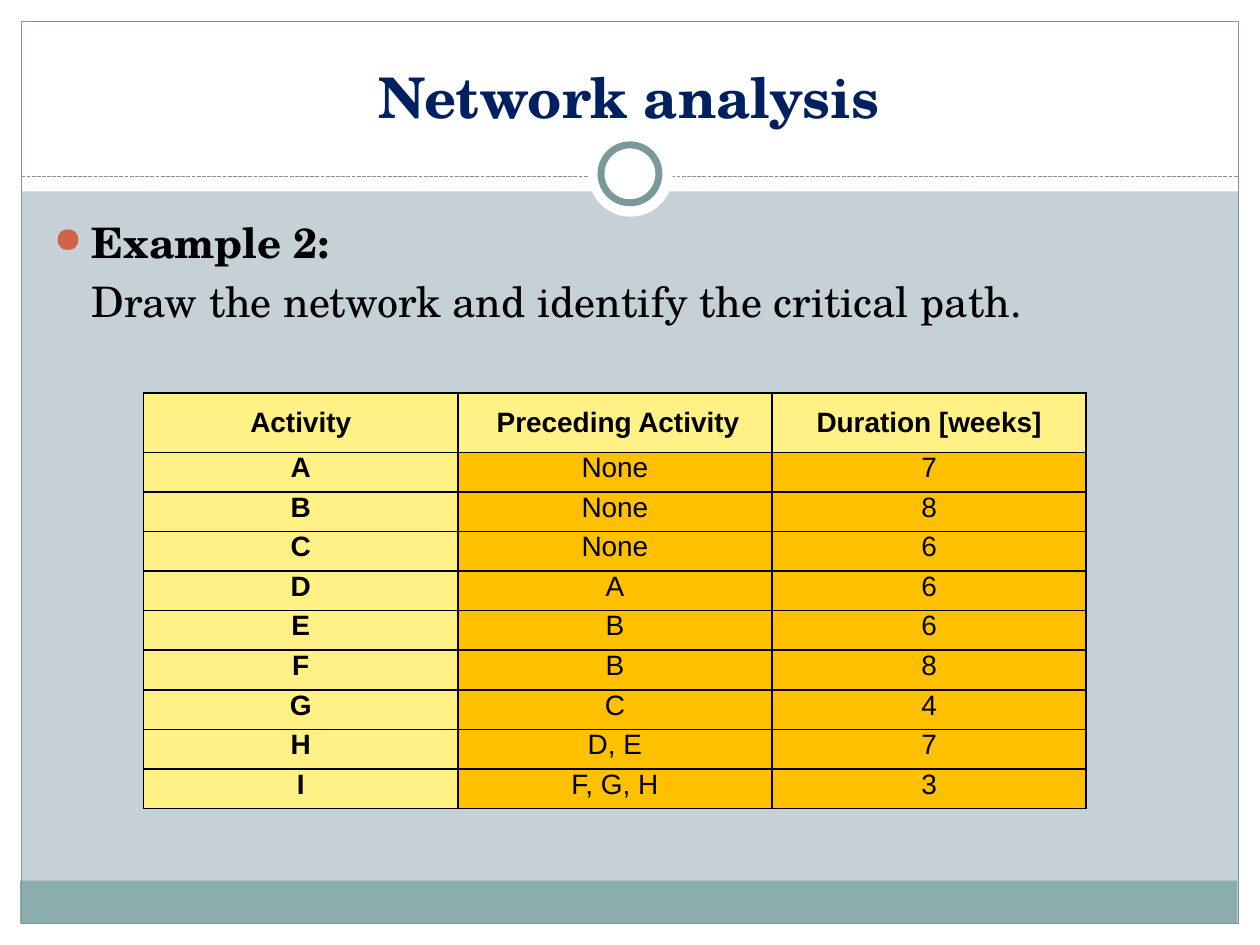
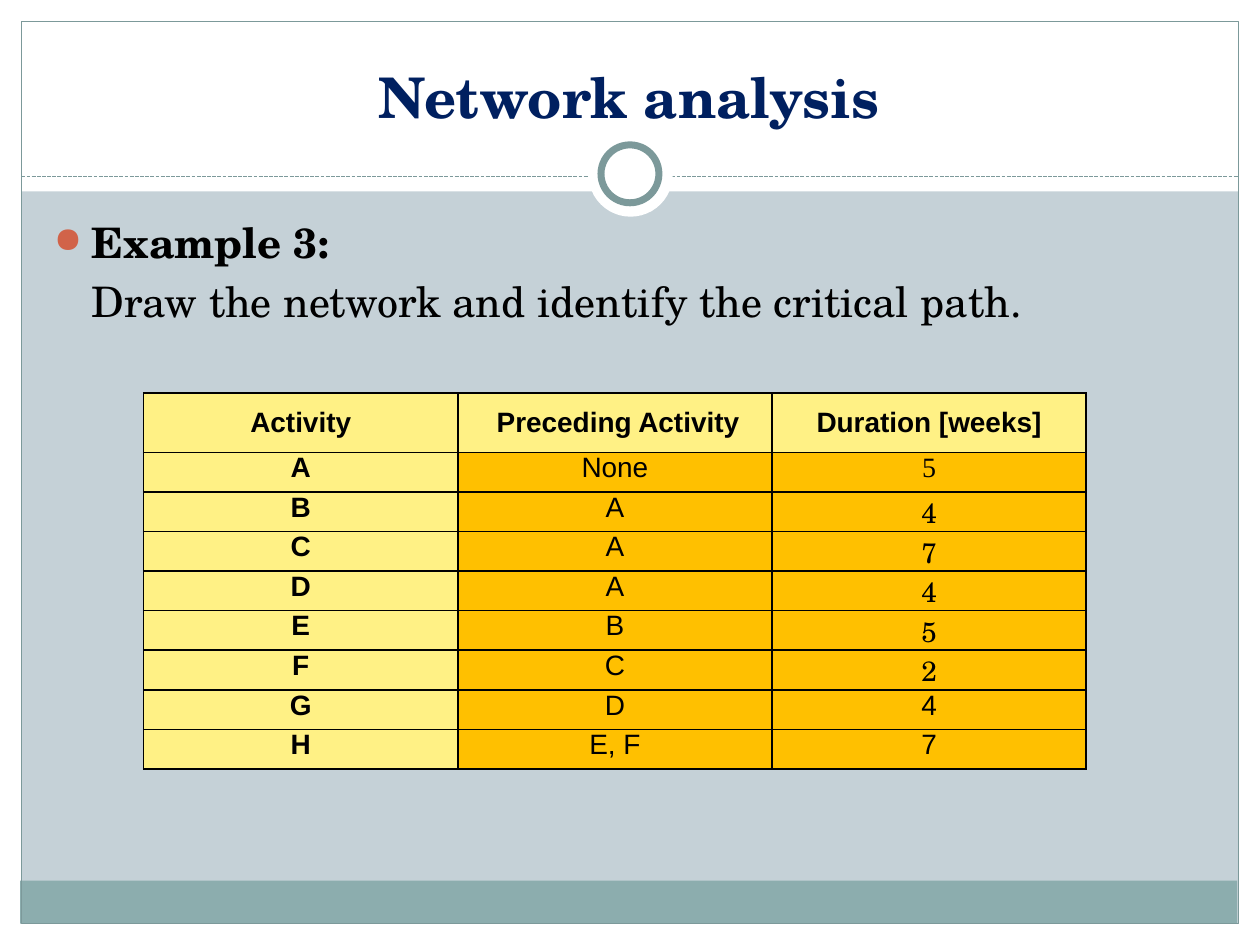
from dataclasses import dataclass

from lxml.etree import SubElement
from pptx import Presentation
from pptx.dml.color import RGBColor
from pptx.enum.dml import MSO_LINE
from pptx.enum.shapes import MSO_CONNECTOR, MSO_SHAPE
from pptx.enum.text import MSO_ANCHOR, PP_ALIGN
from pptx.oxml.ns import qn
from pptx.util import Inches, Pt


@dataclass(frozen=True)
class Theme:
    background: str = "C5D1D7"
    white: str = "FFFFFF"
    footer: str = "8CADAE"
    frame: str = "7C999A"
    title: str = "002060"
    ink: str = "000000"
    bullet: str = "D16349"
    header_cell: str = "FFF185"
    value_cell: str = "FFC000"
    serif: str = "TeX Gyre Schola"
    sans: str = "Arial"
    digits: str = "Times New Roman"
    title_size: int = 32
    body_size: int = 24
    table_size: int = 16


class Deck:
    def __init__(self, theme):
        self.theme = theme
        self.presentation = Presentation()
        self.presentation.slide_width = Inches(10)
        self.presentation.slide_height = Inches(7.5)
        self.slide = None

    def add_slide(self):
        self.slide = self.presentation.slides.add_slide(self.presentation.slide_layouts[6])
        self.paint(self.slide.background.fill, self.theme.background)
        self.add_frame()

    def paint(self, fill, color):
        fill.solid()
        fill.fore_color.rgb = RGBColor.from_string(color)

    def add_shape(self, kind, box, fill=None, line=None, width=0.75):
        shape = self.slide.shapes.add_shape(kind, *map(Inches, box))
        shape.shadow.inherit = False
        if fill:
            self.paint(shape.fill, fill)
        else:
            shape.fill.background()
        if line:
            self.paint(shape.line.fill, line)
            shape.line.width = Pt(width)
        else:
            shape.line.fill.background()

    def add_dashed_line(self, left, right, top):
        connector = self.slide.shapes.add_connector(
            MSO_CONNECTOR.STRAIGHT, Inches(left), Inches(top), Inches(right), Inches(top))
        self.paint(connector.line.fill, self.theme.frame)
        connector.line.width = Pt(0.75)
        connector.line.dash_style = MSO_LINE.SQUARE_DOT
        SubElement(connector.element.spPr, qn("a:effectLst"))

    def add_frame(self):
        theme = self.theme
        margins = [(0, 7.33, 10, 0.17), (0, 0, 10, 1.52), (0, 0, 0.17, 7.5), (9.83, 0, 0.17, 7.5)]
        for margin in margins:
            self.add_shape(MSO_SHAPE.RECTANGLE, margin, theme.white)
        self.add_shape(MSO_SHAPE.RECTANGLE, (0.16, 6.99, 9.66, 0.34), theme.footer)
        self.add_shape(MSO_SHAPE.RECTANGLE, (0.17, 0.17, 9.66, 7.16), line=theme.frame)
        self.add_dashed_line(0.17, 9.83, 1.4)
        self.add_shape(MSO_SHAPE.OVAL, (4.67, 1.05, 0.67, 0.67), theme.white)
        self.add_shape(MSO_SHAPE.OVAL, (4.77, 1.15, 0.46, 0.46), theme.white, theme.frame, 4)

    def add_text_frame(self, box, anchor=MSO_ANCHOR.TOP):
        text_frame = self.slide.shapes.add_textbox(*map(Inches, box)).text_frame
        text_frame.word_wrap = True
        text_frame.vertical_anchor = anchor
        return text_frame

    def add_run(self, paragraph, text, size, font, color, bold=False):
        run = paragraph.add_run()
        run.text = text
        run.font.size = Pt(size)
        run.font.name = font
        run.font.bold = bold
        run.font.color.rgb = RGBColor.from_string(color)

    def indent(self, paragraph, left, first=0):
        properties = paragraph._p.get_or_add_pPr()
        properties.set("marL", str(Inches(left)))
        properties.set("indent", str(Inches(first)))
        return properties

    def add_title(self, text):
        theme = self.theme
        paragraph = self.add_text_frame((0.33, 0.25, 9.33, 0.83), MSO_ANCHOR.BOTTOM).paragraphs[0]
        paragraph.alignment = PP_ALIGN.CENTER
        self.add_run(paragraph, text, theme.title_size, theme.serif, theme.title, True)

    def add_task(self, heading, instruction):
        theme = self.theme
        text_frame = self.add_text_frame((0.33, 1.67, 9.36, 5))
        first, second = text_frame.paragraphs[0], text_frame.add_paragraph()
        for paragraph, text, bold in ((first, heading, True), (second, instruction, False)):
            paragraph.space_before = Pt(theme.body_size * 0.2)
            self.add_run(paragraph, text, theme.body_size, theme.serif, theme.ink, bold)
        self.indent(second, 0.3)
        properties = self.indent(first, 0.3, -0.3)
        bullet_color = SubElement(properties, qn("a:buClr"))
        SubElement(bullet_color, qn("a:srgbClr"), val=theme.bullet)
        SubElement(properties, qn("a:buSzPct"), val="85000")
        SubElement(properties, qn("a:buChar"), char="●")

    def add_cell_borders(self, cell):
        properties = cell._tc.get_or_add_tcPr()
        for side in ("L", "R", "T", "B"):
            border = SubElement(properties, qn(f"a:ln{side}"), w=str(Pt(1)))
            fill = SubElement(border, qn("a:solidFill"))
            SubElement(fill, qn("a:srgbClr"), val=self.theme.ink)

    def add_cell(self, cell, text, font, is_label, is_header):
        theme = self.theme
        cell.margin_left = cell.margin_right = Inches(0.05)
        cell.margin_top = cell.margin_bottom = 0
        cell.vertical_anchor = MSO_ANCHOR.MIDDLE if is_header else MSO_ANCHOR.TOP
        self.add_cell_borders(cell)
        self.paint(cell.fill, theme.header_cell if is_label else theme.value_cell)
        paragraph = cell.text_frame.paragraphs[0]
        paragraph.alignment = PP_ALIGN.CENTER
        self.add_run(paragraph, text, theme.table_size, font, theme.ink, is_label)
        return paragraph

    def add_activity_table(self, activities, duration_fonts):
        header = ("Activity", "Preceding Activity", "Duration [weeks]")
        rows = [header, *activities]
        header_height, row_height = Inches(0.47), Inches(2.83) // 9
        table = self.slide.shapes.add_table(
            len(rows), len(header), Inches(1.14), Inches(3.12), Inches(7.48),
            header_height + row_height * len(activities)).table
        table.first_row = table.horz_banding = False
        for row_index, row in enumerate(rows):
            is_header = row_index == 0
            table.rows[row_index].height = header_height if is_header else row_height
            for column, text in enumerate(row):
                is_duration = column == 2 and not is_header
                font = duration_fonts.get(row[0], self.theme.sans) if is_duration else self.theme.sans
                paragraph = self.add_cell(
                    table.cell(row_index, column), text, font, is_header or column == 0, is_header)
                if is_header and column == 1:
                    self.indent(paragraph, 0, 0.05)


def main():
    theme = Theme()
    deck = Deck(theme)
    examples = [
        ("Example 2:", [
            ("A", "None", "7"), ("B", "None", "8"), ("C", "None", "6"),
            ("D", "A", "6"), ("E", "B", "6"), ("F", "B", "8"),
            ("G", "C", "4"), ("H", "D, E", "7"), ("I", "F, G, H", "3"),
        ], {}),
        ("Example 3:", [
            ("A", "None", "5"), ("B", "A", "4"), ("C", "A", "7"), ("D", "A", "4"),
            ("E", "B", "5"), ("F", "C", "2"), ("G", "D", "4"), ("H", "E, F", "7"),
        ], {"A": theme.digits, **dict.fromkeys("BCDEF", theme.serif)}),
    ]
    for heading, activities, duration_fonts in examples:
        deck.add_slide()
        deck.add_title("Network analysis")
        deck.add_task(heading, "Draw the network and identify the critical path.")
        deck.add_activity_table(activities, duration_fonts)
    deck.presentation.save("out.pptx")


if __name__ == "__main__":
    main()
